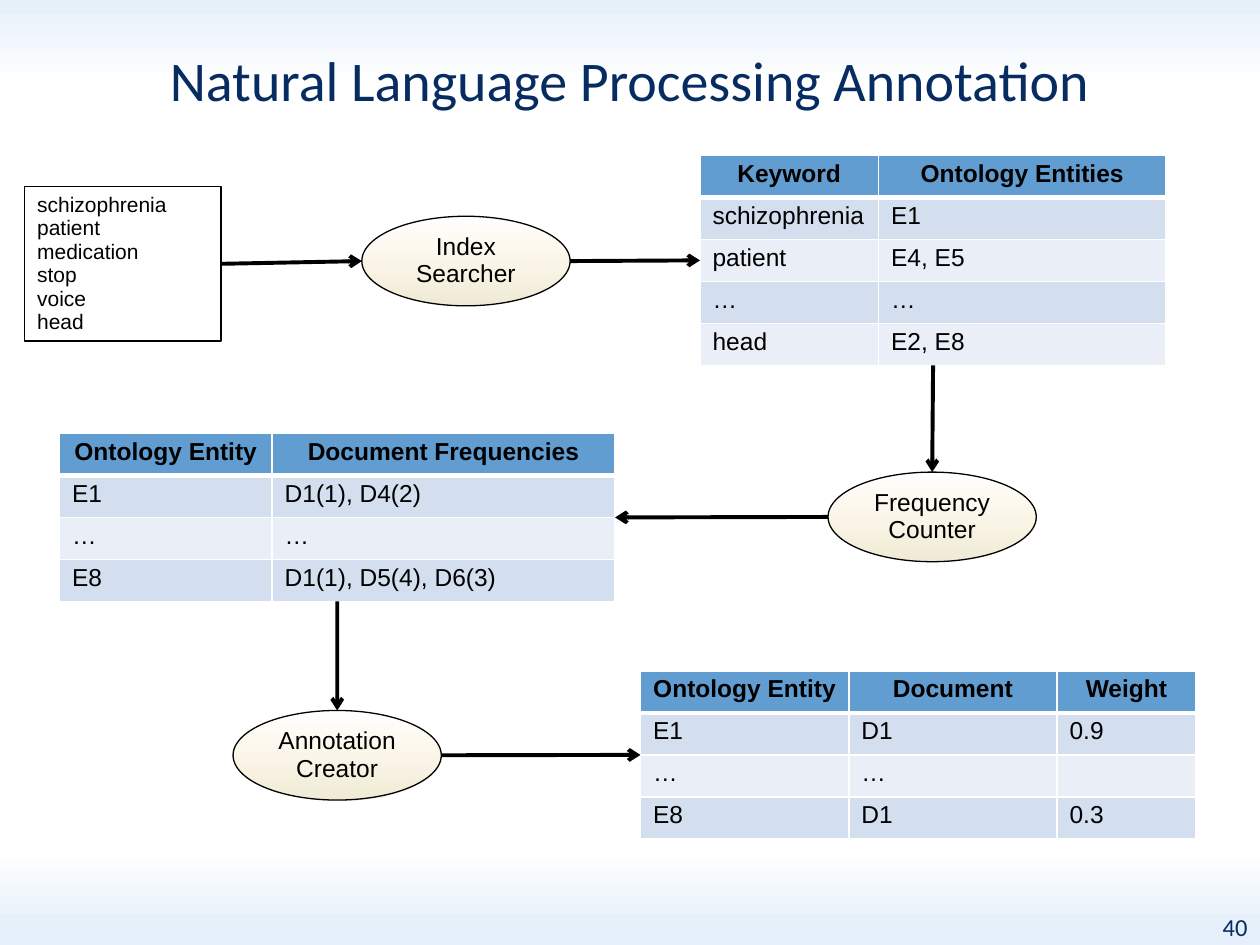
from dataclasses import dataclass

from lxml import etree
from pptx import Presentation
from pptx import util as u
from pptx.dml.color import RGBColor
from pptx.enum import shapes, text
from pptx.oxml.ns import qn


@dataclass(frozen=True)
class Theme:
    navy: str = "072C62"
    ink: str = "000000"
    white: str = "FFFFFF"
    header: str = "629DD1"
    bands: tuple = ("D3DFEE", "EAEFF7")
    sky: tuple = ((0, "E6F0FA", 100), (9, "FFFFFF", 100),
                  (90, "FFFFFF", 100), (98, "E6F0FA", 100))
    cream: tuple = ((0, "FFEFD1", 0), (100, "F0EBD5", 100), (100, "D1C39F", 100))
    title_font: str = "Calibri"
    body_font: str = "Arial"
    title_size: float = 32
    body_size: float = 14
    list_size: float = 12
    spacing: float = 0.93
    row_height: float = 24


@dataclass(frozen=True)
class Frame:
    """A rectangle in points, with the middles of its sides."""
    x: float
    y: float
    w: float
    h: float

    @property
    def lengths(self) -> list:
        return [u.Pt(v) for v in (self.x, self.y, self.w, self.h)]

    @property
    def left(self) -> tuple:
        return self.x, self.y + self.h / 2

    @property
    def right(self) -> tuple:
        return self.x + self.w, self.y + self.h / 2

    @property
    def top(self) -> tuple:
        return self.x + self.w / 2, self.y

    @property
    def bottom(self) -> tuple:
        return self.x + self.w / 2, self.y + self.h


@dataclass(frozen=True)
class Step:
    label: str
    x: float
    y: float

    @property
    def frame(self) -> Frame:
        return Frame(self.x, self.y, 119, 51.2)


@dataclass(frozen=True)
class Grid:
    x: float
    y: float
    columns: tuple
    rows: tuple

    @property
    def frame(self) -> Frame:
        return Frame(self.x, self.y, sum(self.columns), len(self.rows) * THEME.row_height)


THEME = Theme()
LEFT, CENTER, RIGHT = text.PP_ALIGN.LEFT, text.PP_ALIGN.CENTER, text.PP_ALIGN.RIGHT

KEYWORDS = ("schizophrenia", "patient", "medication", "stop", "voice", "head")
KEYWORD_FRAME = Frame(14.2, 106.6, 112.2, 88.3)

SEARCHER = Step("Index Searcher", 206.8, 123.6)
COUNTER = Step("Frequency Counter", 473.2, 269.8)
CREATOR = Step("Annotation Creator", 133.2, 406)

ENTITIES = Grid(400, 88.8, (102, 164.4), (
    ("Keyword", "Ontology Entities"), ("schizophrenia", "E1"),
    ("patient", "E4, E5"), ("…", "…"), ("head", "E2, E8")))
FREQUENCIES = Grid(34, 247.7, (121.5, 196), (
    ("Ontology Entity", "Document Frequencies"), ("E1", "D1(1), D4(2)"),
    ("…", "…"), ("E8", "D1(1), D5(4), D6(3)")))
WEIGHTS = Grid(366, 383.4, (119, 119, 79.4), (
    ("Ontology Entity", "Document", "Weight"), ("E1", "D1", "0.9"),
    ("…", "…", ""), ("E8", "D1", "0.3")))


def rgb(color: str) -> RGBColor:
    return RGBColor.from_string(color)


def write(frame, lines, size: float, align=LEFT, font: str = THEME.body_font,
          color: str = THEME.ink, bold: bool = False) -> None:
    for i, line in enumerate(lines):
        paragraph = frame.add_paragraph() if i else frame.paragraphs[0]
        paragraph.alignment = align
        paragraph.line_spacing = THEME.spacing
        if not line:  # an empty cell keeps the body size
            etree.SubElement(paragraph._p, qn("a:endParaRPr"), sz=str(int(size * 100)))
            continue
        run = paragraph.add_run()
        run.text = line
        run.font.name, run.font.size, run.font.bold = font, u.Pt(size), bold
        run.font.color.rgb = rgb(color)


def set_gradient(fill, element, stops) -> None:
    """Vertical gradient from (position, colour, opacity) stops."""
    fill.gradient()
    gradient = next(element.iter(qn("a:gradFill")))
    for child in list(gradient):
        gradient.remove(child)
    stop_list = etree.SubElement(gradient, qn("a:gsLst"))
    for position, color, opacity in stops:
        stop = etree.SubElement(stop_list, qn("a:gs"), pos=str(position * 1000))
        clr = etree.SubElement(stop, qn("a:srgbClr"), val=color)
        if opacity < 100:
            etree.SubElement(clr, qn("a:alpha"), val=str(opacity * 1000))
    etree.SubElement(gradient, qn("a:lin"), ang="5400000", scaled="0")


def add_outlined(slide, kind, frame: Frame):
    shape = slide.shapes.add_shape(kind, *frame.lengths)
    shape.shadow.inherit = False
    shape.fill.background()
    shape.line.color.rgb = rgb(THEME.ink)
    shape.line.width = u.Pt(0.75)
    shape.text_frame.word_wrap = True
    return shape


def add_step(slide, step: Step) -> None:
    oval = add_outlined(slide, shapes.MSO_SHAPE.OVAL, step.frame)
    set_gradient(oval.fill, oval.element, THEME.cream)
    write(oval.text_frame, [step.label], THEME.body_size, CENTER)


def set_borders(cell, bottom: float) -> None:
    properties = cell._tc.get_or_add_tcPr()
    widths = {"a:lnL": 1, "a:lnR": 1, "a:lnT": 1, "a:lnB": bottom}
    for i, (side, width) in enumerate(widths.items()):
        line = etree.Element(qn(side), w=str(u.Pt(width)))
        fill = etree.SubElement(line, qn("a:solidFill"))
        etree.SubElement(fill, qn("a:srgbClr"), val=THEME.white)
        properties.insert(i, line)


def add_grid(slide, grid: Grid) -> None:
    table = slide.shapes.add_table(
        len(grid.rows), len(grid.columns), *grid.frame.lengths).table
    table.horz_banding = False
    for column, width in zip(table.columns, grid.columns):
        column.width = u.Pt(width)
    for r, values in enumerate(grid.rows):
        table.rows[r].height = u.Pt(THEME.row_height)
        is_header = r == 0
        for c, value in enumerate(values):
            cell = table.cell(r, c)
            cell.fill.solid()
            cell.fill.fore_color.rgb = rgb(THEME.header if is_header else THEME.bands[(r - 1) % 2])
            set_borders(cell, 3 if is_header else 1)
            write(cell.text_frame, [value], THEME.body_size,
                  CENTER if is_header else LEFT, bold=is_header)


def add_arrow(slide, start: tuple, end: tuple) -> None:
    arrow = slide.shapes.add_connector(
        shapes.MSO_CONNECTOR.STRAIGHT, *(u.Pt(v) for v in (*start, *end)))
    arrow.line.color.rgb = rgb(THEME.ink)
    arrow.line.width = u.Pt(2.25)
    etree.SubElement(arrow.line._get_or_add_ln(), qn("a:tailEnd"), type="arrow")
    etree.SubElement(arrow.element.spPr, qn("a:effectLst"))


def main() -> None:
    deck = Presentation()
    deck.slide_width, deck.slide_height = u.Pt(720), u.Pt(540)
    slide = deck.slides.add_slide(deck.slide_layouts[5])
    set_gradient(slide.background.fill, slide.element, THEME.sky)

    # Title and page number
    title = slide.shapes.title
    title.left, title.top, title.width, title.height = Frame(0, 18, 720, 59).lengths
    heading = title.text_frame
    heading.margin_left = heading.margin_right = heading.margin_top = heading.margin_bottom = 0
    heading.vertical_anchor = text.MSO_ANCHOR.MIDDLE
    heading.auto_size = text.MSO_AUTO_SIZE.NONE
    write(heading, ["Natural Language Processing Annotation"], THEME.title_size,
          CENTER, THEME.title_font, THEME.navy)
    page_number = slide.shapes.add_textbox(*Frame(643.7, 519, 76.3, 20).lengths).text_frame
    page_number.word_wrap = True
    write(page_number, ["40"], THEME.body_size, RIGHT, THEME.title_font, THEME.navy)

    # Keywords, processing steps and their result tables
    keywords = add_outlined(slide, shapes.MSO_SHAPE.RECTANGLE, KEYWORD_FRAME)
    write(keywords.text_frame, KEYWORDS, THEME.list_size)
    for step in (SEARCHER, COUNTER, CREATOR):
        add_step(slide, step)
    for grid in (ENTITIES, FREQUENCIES, WEIGHTS):
        add_grid(slide, grid)

    # Flow between the parts
    for start, end in (
            (KEYWORD_FRAME.right, SEARCHER.frame.left),
            (SEARCHER.frame.right, ENTITIES.frame.left),
            (ENTITIES.frame.bottom, COUNTER.frame.top),
            (COUNTER.frame.left, FREQUENCIES.frame.right),
            (FREQUENCIES.frame.bottom, CREATOR.frame.top),
            (CREATOR.frame.right, WEIGHTS.frame.left)):
        add_arrow(slide, start, end)

    deck.save("out.pptx")


if __name__ == "__main__":
    main()
